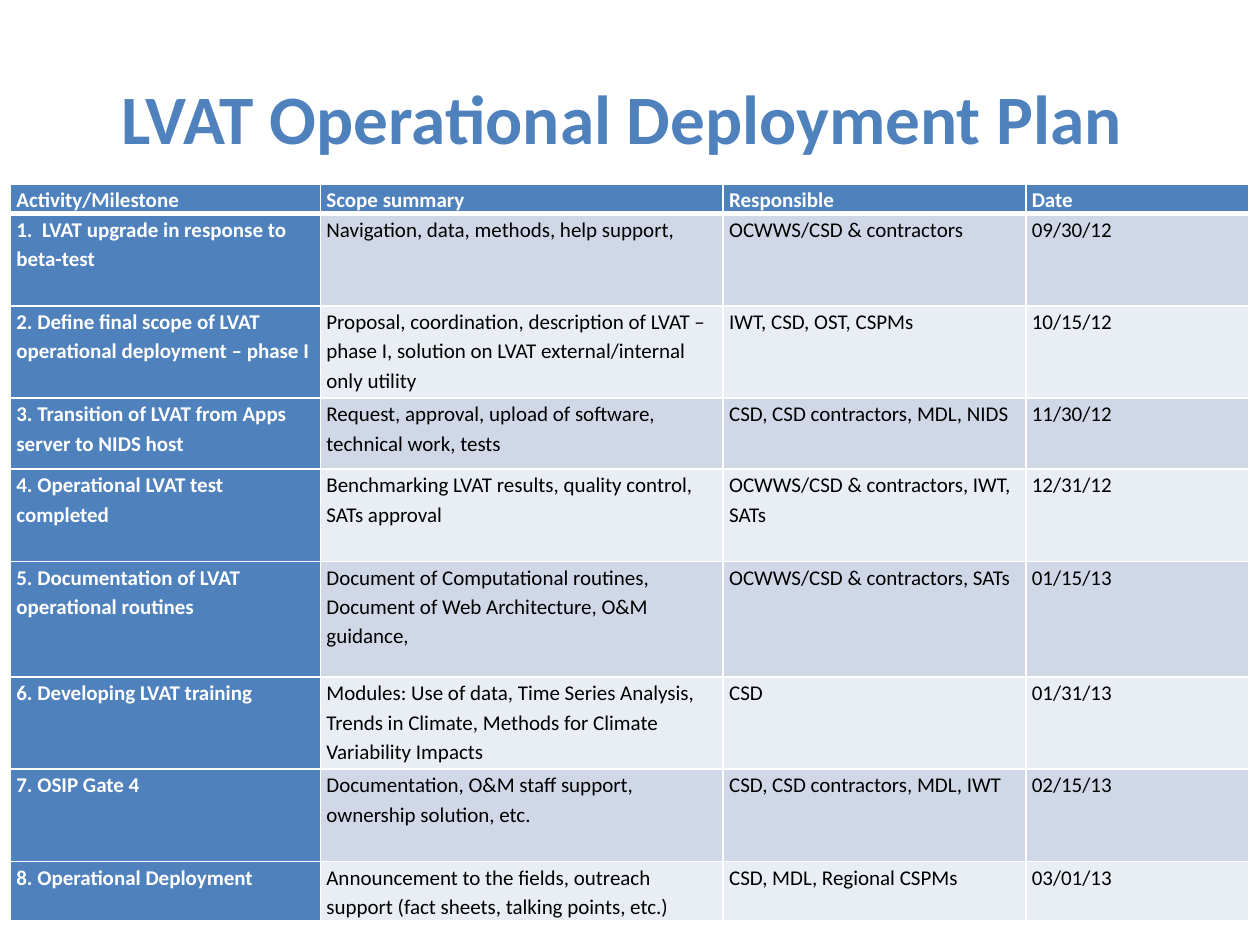
from dataclasses import dataclass

import pptx
import pptx.dml.color
import pptx.enum.text
import pptx.oxml
import pptx.oxml.ns
import pptx.slide
import pptx.table
import pptx.text.text
import pptx.util

FONT = "Calibri"
BLUE, WHITE, BLACK = "4F81BD", "FFFFFF", "000000"
BANDS = ("D0D8E8", "E9EDF4")
COLUMN_WIDTHS = (6.25, 8.12, 6.1, 4.5)
HEADER_HEIGHT = 0.48
HEADINGS = ("Activity/Milestone", "Scope summary", "Responsible", "Date")


@dataclass(frozen=True)
class Milestone:
    activity: str
    scope: str
    responsible: str
    date: str
    height: float = 1.86


MILESTONES = (
    Milestone("1.  LVAT upgrade in response to beta-test",
              "Navigation, data, methods, help support,",
              "OCWWS/CSD & contractors", "09/30/12"),
    Milestone("2. Define final scope of LVAT operational deployment – phase I",
              "Proposal, coordination, description of LVAT – phase I, "
              "solution on LVAT external/internal only utility",
              "IWT, CSD, OST, CSPMs", "10/15/12"),
    Milestone("3. Transition of LVAT from Apps server to NIDS host",
              "Request, approval, upload of software, technical work, tests",
              "CSD, CSD contractors, MDL, NIDS", "11/30/12", 1.43),
    Milestone("4. Operational LVAT test completed",
              "Benchmarking LVAT results, quality control, SATs approval",
              "OCWWS/CSD & contractors, IWT, SATs", "12/31/12"),
    Milestone("5. Documentation of LVAT operational routines",
              "Document of Computational routines, Document of Web "
              "Architecture, O&M guidance,",
              "OCWWS/CSD & contractors, SATs", "01/15/13", 2.33),
    Milestone("6. Developing LVAT training",
              "Modules: Use of data, Time Series Analysis, Trends in Climate, "
              "Methods for Climate Variability Impacts",
              "CSD", "01/31/13"),
    Milestone("7. OSIP Gate 4",
              "Documentation, O&M staff support, ownership solution, etc.",
              "CSD, CSD contractors, MDL, IWT", "02/15/13"),
    Milestone("8. Operational Deployment",
              "Announcement to the fields, outreach support "
              "(fact sheets, talking points, etc.)",
              "CSD, MDL, Regional CSPMs", "03/01/13", 0.94),
)


def color(value: str) -> pptx.dml.color.RGBColor:
    return pptx.dml.color.RGBColor.from_string(value)


def set_font(para: pptx.text.text._Paragraph, size: float, ink: str, bold: bool) -> None:
    para.font.name = FONT
    para.font.size = pptx.util.Pt(size)
    para.font.bold = bold
    para.font.color.rgb = color(ink)


def set_borders(cell: pptx.table._Cell, widths: dict[str, int]) -> None:
    """Draw white cell borders; widths in points are keyed by side, in L, R, T, B order."""
    properties = cell._tc.get_or_add_tcPr()
    for index, (side, width) in enumerate(widths.items()):
        line = pptx.oxml.parse_xml(
            f'<a:ln{side} {pptx.oxml.ns.nsdecls("a")} w="{pptx.util.Pt(width)}">'
            f'<a:solidFill><a:srgbClr val="{WHITE}"/></a:solidFill></a:ln{side}>')
        properties.insert(index, line)


def fill_cell(cell: pptx.table._Cell, text: str, fill: str, strong: bool,
              top: int, bottom: int) -> None:
    cell.text = text
    cell.margin_left = cell.margin_right = pptx.util.Cm(0.12)
    cell.margin_top = cell.margin_bottom = 0
    para = cell.text_frame.paragraphs[0]
    para.line_spacing = 1.15
    set_font(para, 12, WHITE if strong else BLACK, strong)
    cell.fill.solid()
    cell.fill.fore_color.rgb = color(fill)
    set_borders(cell, {"L": 1, "R": 1, "T": top, "B": bottom})


def add_title(page: pptx.slide.Slide, text: str) -> None:
    title = page.shapes.title
    title.left, title.top = pptx.util.Cm(1.27), pptx.util.Cm(0.76)
    title.width, title.height = pptx.util.Cm(22.86), pptx.util.Cm(3.18)
    title.text = text
    title.text_frame.vertical_anchor = pptx.enum.text.MSO_ANCHOR.MIDDLE
    para = title.text_frame.paragraphs[0]
    para.alignment = pptx.enum.text.PP_ALIGN.CENTER
    set_font(para, 39.6, BLUE, True)


def add_plan(page: pptx.slide.Slide) -> None:
    heights = [HEADER_HEIGHT, *(item.height for item in MILESTONES)]
    table = page.shapes.add_table(
        len(heights), len(COLUMN_WIDTHS), pptx.util.Cm(0.21), pptx.util.Cm(3.71),
        pptx.util.Cm(sum(COLUMN_WIDTHS)), pptx.util.Cm(sum(heights))).table
    table.first_col = True
    for column, width in zip(table.columns, COLUMN_WIDTHS):
        column.width = pptx.util.Cm(width)
    for row, height in zip(table.rows, heights):
        row.height = pptx.util.Cm(height)

    for cell, heading in zip(table.rows[0].cells, HEADINGS):
        fill_cell(cell, heading, BLUE, True, top=1, bottom=3)
    for number, item in enumerate(MILESTONES, start=1):
        band = BANDS[(number - 1) % 2]
        texts = (item.activity, item.scope, item.responsible, item.date)
        for index, text in enumerate(texts):
            is_label = index == 0
            fill_cell(table.cell(number, index), text, BLUE if is_label else band,
                      is_label, top=3 if number == 1 else 1, bottom=1)


def main() -> None:
    deck = pptx.Presentation()
    deck.slide_width, deck.slide_height = pptx.util.Cm(25.4), pptx.util.Cm(19.05)
    page = deck.slides.add_slide(deck.slide_layouts.get_by_name("Title Only"))
    add_title(page, "LVAT Operational Deployment Plan ")
    add_plan(page)
    deck.save("out.pptx")


if __name__ == "__main__":
    main()
